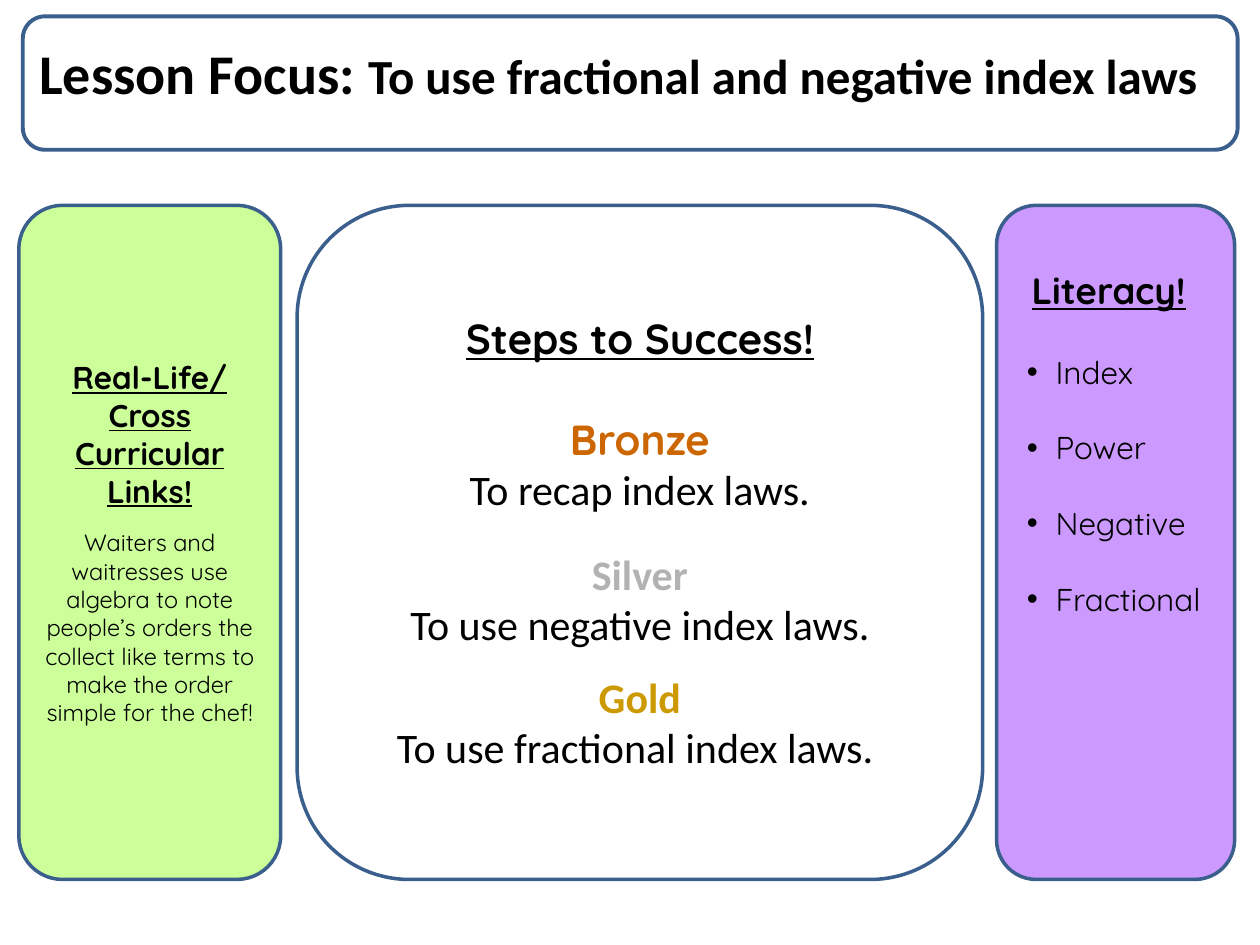
from dataclasses import dataclass

import pptx
import pptx.dml.color
import pptx.enum.shapes
import pptx.enum.text
import pptx.util
from lxml import etree
from pptx.util import Cm

RGBColor = pptx.dml.color.RGBColor
Pt = pptx.util.Pt
Kind = pptx.enum.shapes.MSO_SHAPE
Align = pptx.enum.text.PP_ALIGN
Anchor = pptx.enum.text.MSO_ANCHOR

BLACK = RGBColor(0x00, 0x00, 0x00)
WHITE = RGBColor(0xFF, 0xFF, 0xFF)
BLUE = RGBColor(0x3A, 0x5F, 0x8C)
GREEN = RGBColor(0xCC, 0xFF, 0x99)
PURPLE = RGBColor(0xCC, 0x99, 0xFF)
BRONZE = RGBColor(0xCC, 0x66, 0x00)
SILVER = RGBColor(0xB2, 0xB2, 0xB2)
GOLD = RGBColor(0xCC, 0x99, 0x00)

QUICK, CALI = "Quicksand", "Calibri"
TOP, TALL = 4.14, 13.59
INDENT = Cm(0.58)


@dataclass
class Run:
    text: str
    size: float
    font: str = QUICK
    color: RGBColor = BLACK
    bold: bool = False
    line: bool = False


@dataclass
class Para:
    runs: list[Run]
    gap: float = 0
    bullet: bool = False


@dataclass
class Box:
    left: float
    top: float
    width: float
    height: float
    paras: list[Para]
    anchor: Anchor = Anchor.MIDDLE
    kind: Kind | None = None
    fill: RGBColor | None = None
    edge: float = 2


def add_bullet(para) -> None:
    props = para._p.get_or_add_pPr()
    props.set("marL", str(INDENT))
    props.set("indent", str(-INDENT))
    space = pptx.oxml.ns.qn
    etree.SubElement(props, space("a:buFont")).set("typeface", "Arial")
    etree.SubElement(props, space("a:buChar")).set("char", "•")


def add_run(para, run: Run) -> None:
    part = para.add_run()
    part.text = run.text
    style = {"name": run.font, "size": Pt(run.size),
             "bold": run.bold, "underline": run.line}
    for key, value in style.items():
        setattr(part.font, key, value)
    part.font.color.rgb = run.color


def add_text(frame, box: Box) -> None:
    for key, value in {"word_wrap": True, "vertical_anchor": box.anchor}.items():
        setattr(frame, key, value)
    for num, item in enumerate(box.paras):
        para = frame.add_paragraph() if num else frame.paragraphs[0]
        style = {"alignment": Align.LEFT if item.bullet else Align.CENTER,
                 "space_before": Pt(item.gap)}
        for key, value in style.items():
            setattr(para, key, value)
        if item.bullet:
            add_bullet(para)
        for run in item.runs:
            add_run(para, run)


def add_box(slide, box: Box) -> None:
    """Draw a panel when the box has a kind, else a bare text box."""
    place = [Cm(v) for v in (box.left, box.top, box.width, box.height)]
    if box.kind is None:
        shape = slide.shapes.add_textbox(*place)
    else:
        shape = slide.shapes.add_shape(box.kind, *place)
        shape.shadow.inherit = False
        shape.line.color.rgb = BLUE
        shape.line.width = Pt(box.edge)
        if box.fill is None:
            shape.fill.background()
        else:
            shape.fill.solid()
            shape.fill.fore_color.rgb = box.fill
    add_text(shape.text_frame, box)


def head(text: str, size: float) -> Para:
    return Para([Run(text, size, bold=True, line=True)])


def step(name: str, color: RGBColor, font: str, goal: str, gap: float) -> list[Para]:
    return [Para([Run(name, 24, font, color, bold=True)], gap),
            Para([Run(goal, 24, CALI)])]


LINKS = [
    head("Real-Life/", 18),
    head("Cross Curricular Links!", 18),
    Para([Run("Waiters and waitresses use algebra to note people’s orders the "
              "collect like terms to make the order simple for the chef!", 13.5)], 10.8),
]
STEPS = [
    head("Steps to Success!", 24),
    *step("Bronze", BRONZE, QUICK, "To recap index laws.", 28.8),
    *step("Silver", SILVER, CALI, "To use negative index laws.", 19.5),
    *step("Gold", GOLD, CALI, "To use fractional index laws. ", 12.8),
]
WORDS = [Para([Run(word, 18)], 21.6 if num else 0, bullet=True)
         for num, word in enumerate(["Index", "Power", "Negative", "Fractional"])]
TITLE = [Para([Run("Lesson Focus: ", 32, CALI, bold=True),
               Run("To use fractional and negative index laws", 28, CALI, bold=True)])]

BOXES = [
    Box(20.09, TOP, 4.8, TALL, [], kind=Kind.ROUNDED_RECTANGLE, fill=PURPLE),
    Box(0.38, TOP, 5.28, TALL, LINKS, kind=Kind.ROUNDED_RECTANGLE, fill=GREEN),
    Box(5.99, TOP, 13.82, TALL, STEPS,
        kind=Kind.FLOWCHART_ALTERNATE_PROCESS, fill=WHITE),
    Box(19.3, 5.28, 6.1, 1.14, [head("Literacy!", 21)], Anchor.TOP),
    Box(20.45, 6.99, 4.5, 6.4, WORDS, Anchor.TOP),
    Box(0.46, 0.33, 24.49, 2.69, [], kind=Kind.ROUNDED_RECTANGLE, edge=2.25),
    Box(0, 0.53, 24.92, 1.85, TITLE),
]


def main() -> None:
    deck = pptx.Presentation()
    deck.slide_width, deck.slide_height = Cm(25.4), Cm(19.05)
    slide = deck.slides.add_slide(deck.slide_layouts[6])
    for box in BOXES:
        add_box(slide, box)
    deck.save("out.pptx")


if __name__ == "__main__":
    main()
